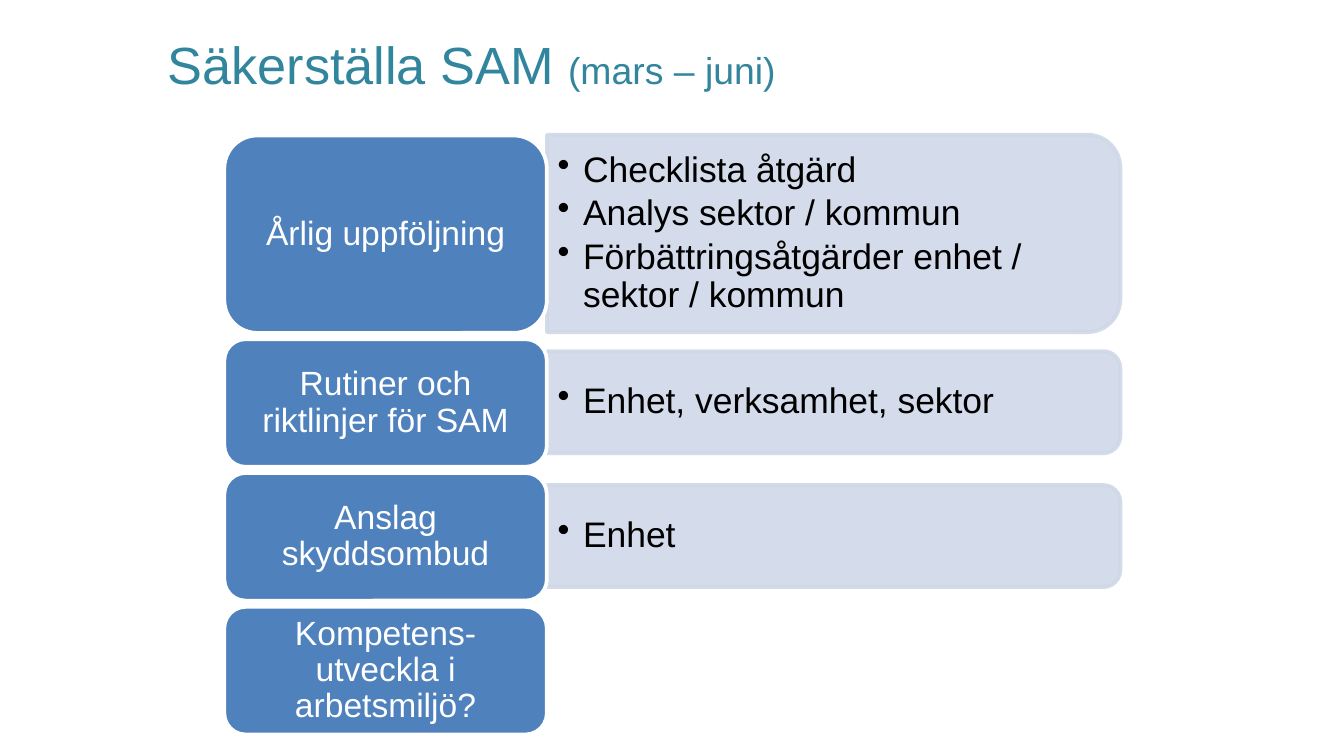
from lxml.etree import SubElement
from pptx import Presentation
from pptx.dml.color import RGBColor
from pptx.enum.shapes import MSO_SHAPE
from pptx.enum.text import MSO_ANCHOR, PP_ALIGN
from pptx.oxml.ns import qn
from pptx.util import Pt

TEAL = RGBColor(0x31, 0x85, 0x9C)
BLUE = RGBColor(0x4F, 0x81, 0xBD)
PALE = RGBColor(0xD0, 0xD8, 0xE8)
WHITE = RGBColor(0xFF, 0xFF, 0xFF)
BLACK = RGBColor(0, 0, 0)

TITLE = [("Säkerställa SAM ", 28), ("(mars – juni)", 20)]
ROWS = [
    ("Årlig uppföljning", 105.8, 105.8,
     ["Checklista åtgärd", "Analys sektor / kommun",
      "Förbättringsåtgärder enhet / sektor / kommun"]),
    ("Rutiner och riktlinjer för SAM", 68.4, 54.7, ["Enhet, verksamhet, sektor"]),
    ("Anslag skyddsombud", 68.4, 54.7, ["Enhet"]),
    ("Kompetens-utveckla i arbetsmiljö?", 68.4, 0, []),
]
LEFT, TOP, GAP = 120.2, 72.6, 3.3
LABEL_W, PANEL_W = 172.8, 307.2
PANEL_X = LEFT + LABEL_W
PANEL_SHIFT = -0.4
INDENT = 13.7


def set_insets(tf, x, y):
    tf.margin_left = tf.margin_right = Pt(x)
    tf.margin_top = tf.margin_bottom = Pt(y)
    tf.vertical_anchor = MSO_ANCHOR.MIDDLE
    tf.word_wrap = True


def add_run(p, text, size, color):
    r = p.add_run()
    r.text = text
    r.font.name = "Arial"
    r.font.size = Pt(size)
    r.font.color.rgb = color


def write(tf, texts, size=18, color=WHITE, align=PP_ALIGN.LEFT, after=0, bullet=False):
    for i, text in enumerate(texts):
        p = tf.paragraphs[0] if i == 0 else tf.add_paragraph()
        p.alignment = align
        p.line_spacing = 0.9
        p.space_after = Pt(after)
        if bullet:
            pPr = p._p.get_or_add_pPr()
            pPr.set("marL", str(Pt(INDENT)))
            pPr.set("indent", str(Pt(-INDENT)))
            SubElement(pPr, qn("a:buChar")).set("char", "•")
        add_run(p, text, size, color)


def add_block(kind, x, y, w, h, fill, line, alpha=None):
    sp = s.shapes.add_shape(kind, Pt(x), Pt(y), Pt(w), Pt(h))
    sp.shadow.inherit = False
    sp.fill.solid()
    sp.fill.fore_color.rgb = fill
    sp.line.color.rgb = line
    sp.line.width = Pt(2)
    if alpha:
        for clr in sp._element.spPr.iter(qn("a:srgbClr")):
            SubElement(clr, qn("a:alpha")).set("val", str(alpha * 1000))
    return sp


def add_panel(mid, h, items):
    x = PANEL_X + PANEL_W / 2 - h / 2
    y = mid + PANEL_SHIFT - PANEL_W / 2
    sp = add_block(MSO_SHAPE.ROUND_2_SAME_RECTANGLE, x, y, h, PANEL_W, PALE, PALE, 90)
    sp.rotation = 90
    text_h = h * 0.9
    box = s.shapes.add_textbox(Pt(PANEL_X), Pt(mid + PANEL_SHIFT - text_h / 2),
                               Pt(PANEL_W - h * 0.05), Pt(text_h))
    set_insets(box.text_frame, 5.7, 2.85)
    write(box.text_frame, items, size=19, color=BLACK, after=2.85, bullet=True)


prs = Presentation()
prs.slide_width, prs.slide_height = Pt(720), Pt(405)
s = prs.slides.add_slide(prs.slide_layouts[6])

y = TOP
for label, h, panel_h, items in ROWS:
    if items:
        add_panel(y + h / 2, panel_h, items)
    sp = add_block(MSO_SHAPE.ROUNDED_RECTANGLE, LEFT, y, LABEL_W, h, BLUE, WHITE)
    set_insets(sp.text_frame, 5.4, 2.7)
    write(sp.text_frame, [label], align=PP_ALIGN.CENTER)
    y += h + GAP

title = s.shapes.add_textbox(Pt(82.8), Pt(13.7), Pt(571), Pt(41))
title.text_frame.word_wrap = True
for text, size in TITLE:
    add_run(title.text_frame.paragraphs[0], text, size, TEAL)

prs.save("out.pptx")
